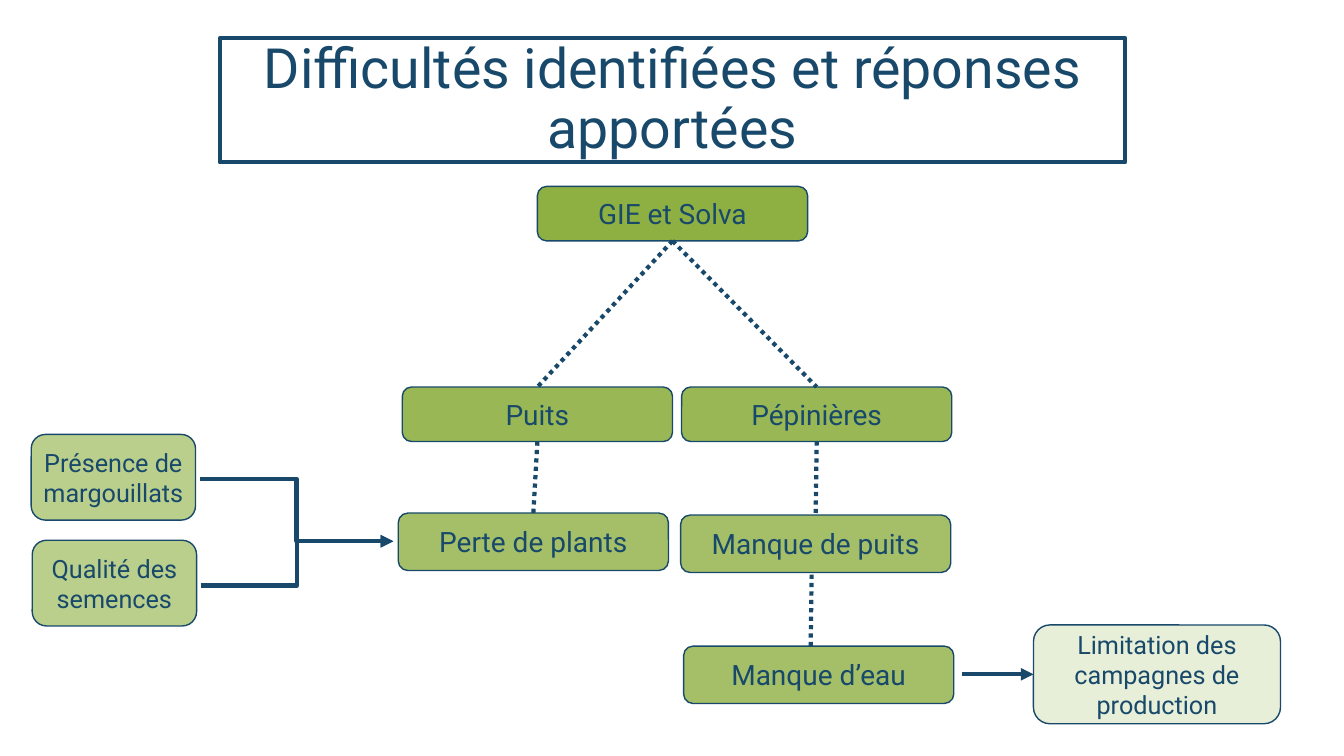
"""Build the slide on identified difficulties and the responses to them."""
from lxml.etree import SubElement
from pptx import Presentation
from pptx.dml.color import RGBColor
from pptx.enum.dml import MSO_LINE
from pptx.enum.shapes import MSO_CONNECTOR, MSO_SHAPE
from pptx.enum.text import MSO_ANCHOR, MSO_AUTO_SIZE, PP_ALIGN
from pptx.oxml.ns import qn
from pptx.util import Inches, Pt

TOP, LEFT, BOTTOM = 0, 1, 2


def color(hex_value):
    """Turn a hex string into a colour."""
    return RGBColor.from_string(hex_value)


def write(frame, text, *, size, font, ink, spacing=None, margin=0.03):
    """Write centred, formatted text in a text frame."""
    frame.word_wrap = True
    frame.auto_size = MSO_AUTO_SIZE.NONE
    frame.vertical_anchor = MSO_ANCHOR.MIDDLE
    frame.margin_left = frame.margin_right = Inches(margin)
    frame.margin_top = frame.margin_bottom = Inches(margin)
    paragraph = frame.paragraphs[0]
    paragraph.alignment = PP_ALIGN.CENTER
    if spacing:
        paragraph.line_spacing = spacing
    run = paragraph.add_run()
    run.text = text
    run.font.size = Pt(size)
    run.font.name = font
    run.font.color.rgb = color(ink)


class Diagram:
    """Hold the style and the slide, and draw each kind of element."""

    font = "Roboto"
    ink = "18496A"
    green = "8EB042"

    def __init__(self, slide):
        """Keep the slide to draw on."""
        self.slide = slide

    def outline(self, shape, width):
        """Draw the outline of a shape or connector."""
        shape.line.color.rgb = color(self.ink)
        shape.line.width = Pt(width)

    def title(self, text, left, top, width, height):
        """Place the framed title."""
        title = self.slide.shapes.title
        title.left, title.top = Inches(left), Inches(top)
        title.width, title.height = Inches(width), Inches(height)
        self.outline(title, 3)
        write(title.text_frame, text, size=39.6, font=self.font,
              ink=self.ink, spacing=0.9, margin=0.1)

    def box(self, text, left, top, width=2.68, height=0.54, opacity=100, size=20):
        """Add a rounded box with its label."""
        box = self.slide.shapes.add_shape(
            MSO_SHAPE.ROUNDED_RECTANGLE,
            Inches(left), Inches(top), Inches(width), Inches(height))
        box.shadow.inherit = False
        box.fill.solid()
        box.fill.fore_color.rgb = color(self.green)
        if opacity < 100:
            fill = box.element.spPr.find(qn("a:solidFill")).find(qn("a:srgbClr"))
            SubElement(fill, qn("a:alpha"), val=str(opacity * 1000))
        self.outline(box, 1)
        write(box.text_frame, text, size=size, font=self.font, ink=self.ink)
        return box

    def line(self, start, end, kind=MSO_CONNECTOR.STRAIGHT, arrow=False):
        """Add a dotted link or a solid arrow between two points."""
        connector = self.slide.shapes.add_connector(
            kind, *(Inches(value) for value in (*start, *end)))
        self.outline(connector, 3)
        properties = connector.element.spPr
        if arrow:
            SubElement(properties.find(qn("a:ln")), qn("a:tailEnd"), type="triangle")
        else:
            connector.line.dash_style = MSO_LINE.ROUND_DOT
        SubElement(properties, qn("a:effectLst"))
        return connector

    def link(self, upper, lower):
        """Join the bottom of one box to the top of another."""
        connector = self.line((0, 0), (1, 1))
        connector.begin_connect(upper, BOTTOM)
        connector.end_connect(lower, TOP)


def main():
    """Draw the slide and save the presentation."""
    presentation = Presentation()
    presentation.slide_width = Inches(13.33)
    presentation.slide_height = Inches(7.5)
    slide = presentation.slides.add_slide(presentation.slide_layouts[5])
    diagram = Diagram(slide)
    diagram.title("Difficultés identifiées et réponses apportées", 2.18, 0.38, 8.98, 1.23)

    group = diagram.box("GIE et Solva", 5.33, 1.85)
    wells = diagram.box("Puits", 3.99, 3.84, opacity=90)
    nurseries = diagram.box("Pépinières", 6.76, 3.84, opacity=90)
    problem = {"height": 0.57, "opacity": 80}
    plant_loss = diagram.box("Perte de plants", 3.95, 5.09, **problem)
    well_shortage = diagram.box("Manque de puits", 6.75, 5.11, **problem)
    diagram.box("Manque d’eau", 6.78, 6.41, **problem)
    cause = {"width": 1.63, "height": 0.85, "opacity": 60, "size": 18}
    diagram.box("Présence de margouillats", 0.31, 4.31, **cause)
    diagram.box("Qualité des semences", 0.32, 5.36, **cause)
    limitation = diagram.box("Limitation des campagnes de production", 10.25, 6.2,
                             width=2.45, height=0.98, opacity=20, size=18)

    for upper, lower in ((group, wells), (group, nurseries),
                         (wells, plant_loss), (nurseries, well_shortage)):
        diagram.link(upper, lower)
    diagram.line((8.05, 5.7), (8.04, 6.43))
    for start in ((1.98, 4.75), (1.99, 5.81)):
        diagram.line(start, (3.9, 5.37), MSO_CONNECTOR.ELBOW, arrow=True)
    arrow = diagram.line((9.54, 6.69), (10.25, 6.69), arrow=True)
    arrow.end_connect(limitation, LEFT)

    presentation.save("out.pptx")


if __name__ == "__main__":
    main()
